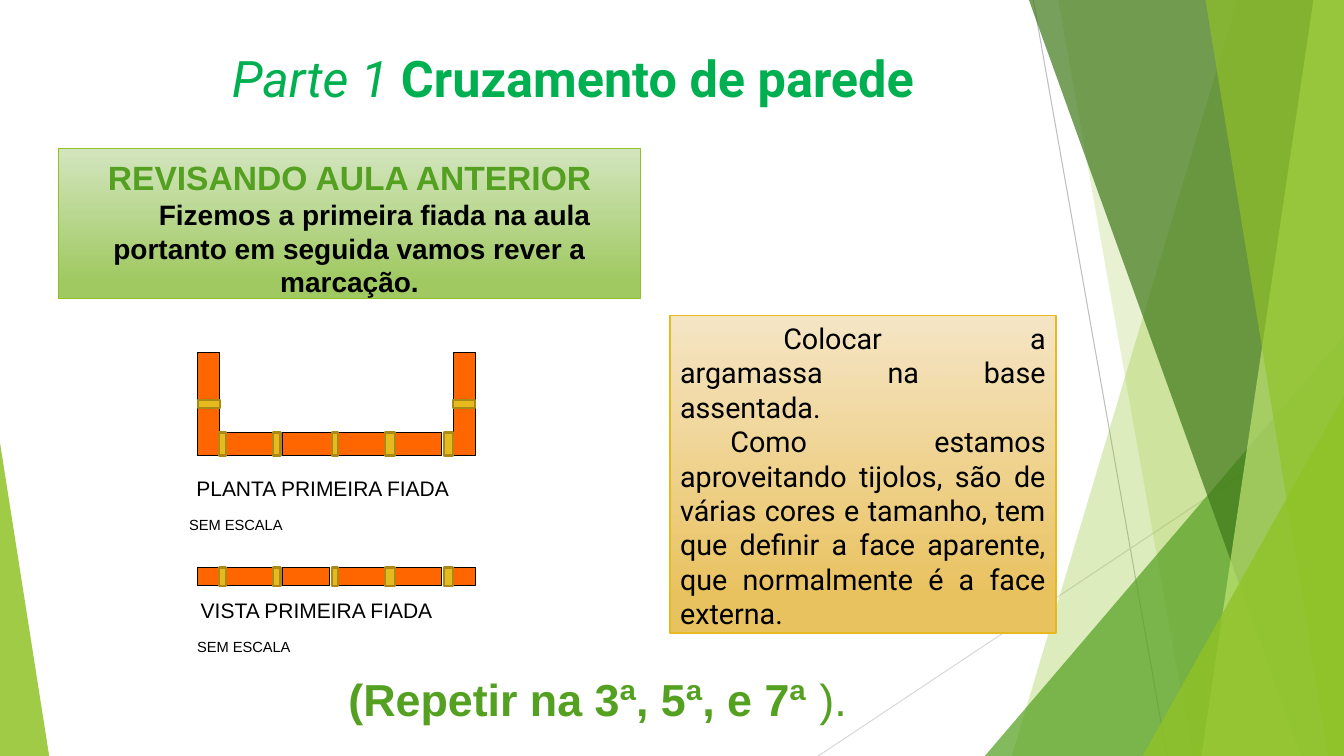
from lxml import etree
from pptx import Presentation
from pptx.dml.color import RGBColor
from pptx.enum.shapes import MSO_CONNECTOR as Connector, MSO_SHAPE as Preset
from pptx.enum.text import MSO_ANCHOR as Anchor, PP_ALIGN as Align
from pptx.oxml.ns import qn
from pptx.util import Cm, Pt

WIDTH, HEIGHT = 33.87, 19.05
LIME, GREEN, BLACK = "90C226", "54A021", "000000"
BRICK, MORTAR, MORTAR_EDGE = "FF6600", "E6B91E", "AA8916"

# Wall drawing: both views share the same columns
SIDE_LEFTS, SIDE_WIDTH = (4.98, 11.42), 0.56
BRICK_START, BRICK_PITCH, BRICK_WIDTH = 5.69, 1.42, 1.19
JOINTS = [(5.6, 0.18), (6.98, 0.18), (8.44, 0.16), (9.83, 0.25), (11.3, 0.23)]


def rgb(color):
    return RGBColor.from_string(color)


def lengths(*values):
    return [Cm(value) for value in values]


def set_alpha(shape, percent):
    color = shape.fill._xPr.find(qn("a:solidFill"))[0]
    etree.SubElement(color, qn("a:alpha")).set("val", str(percent * 1000))


def paint(shape, fill, line=None, line_width=0.75, alpha=None):
    shape.shadow.inherit = False
    shape.fill.solid()
    shape.fill.fore_color.rgb = rgb(fill)
    if alpha:
        set_alpha(shape, alpha)
    if line:
        shape.line.color.rgb = rgb(line)
        shape.line.width = Pt(line_width)
    else:
        shape.line.fill.background()


def add_line(slide, start, end, color):
    line = slide.shapes.add_connector(Connector.STRAIGHT, *lengths(*start, *end))
    line.line.color.rgb = rgb(color)
    line.line.width = Pt(0.75)
    etree.SubElement(line._element.spPr, qn("a:effectLst"))


def add_facet(slide, top, bottom, color, alpha):
    """Fill the slide from a slanted edge to the right border."""
    builder = slide.shapes.build_freeform(Cm(top), 0)
    corners = [(WIDTH, 0), (WIDTH, HEIGHT), (bottom, HEIGHT)]
    builder.add_line_segments([lengths(*corner) for corner in corners])
    paint(builder.convert_to_shape(), color, alpha=alpha)


def add_triangle(slide, left, top, width, apex, color, alpha):
    """Stand a triangle on the bottom border of the slide."""
    shape = slide.shapes.add_shape(
        Preset.ISOSCELES_TRIANGLE, *lengths(left, top, width, HEIGHT - top))
    shape.adjustments[0] = apex
    paint(shape, color, alpha=alpha)


def add_block(slide, box, fill, line, line_width):
    shape = slide.shapes.add_shape(Preset.RECTANGLE, *lengths(*box))
    paint(shape, fill, line, line_width)


def add_brick(slide, *box):
    add_block(slide, box, BRICK, BLACK, 0.75)


def add_mortar(slide, *box):
    add_block(slide, box, MORTAR, MORTAR_EDGE, 1.5)


def add_run(paragraph, text, color, size, **formats):
    run = paragraph.add_run()
    run.text = text
    run.font.color.rgb = rgb(color)
    for name, value in {"name": "Arial", "size": Pt(size), **formats}.items():
        setattr(run.font, name, value)


def indent_first_line(paragraph, indent):
    paragraph._p.get_or_add_pPr().set("indent", str(Cm(indent)))


def add_text(slide, box, text, size):
    frame = slide.shapes.add_textbox(*lengths(*box)).text_frame
    frame.word_wrap = True
    add_run(frame.paragraphs[0], text, BLACK, size)
    return frame.paragraphs[0]


def add_panel(slide, box, stops, line, paragraphs, align, top_inset):
    """Add a gradient box; paragraphs are (first-line indent, text, color, formats)."""
    shape = slide.shapes.add_shape(Preset.RECTANGLE, *lengths(*box))
    paint(shape, stops[0], line, 1)
    shape.fill.gradient()
    shape.fill.gradient_angle = 270
    for stop, color, position in zip(shape.fill.gradient_stops, stops, (0, 0.88)):
        stop.color.rgb = rgb(color)
        stop.position = position
    frame = shape.text_frame
    frame.word_wrap = True
    frame.vertical_anchor = Anchor.TOP
    frame.margin_top = Cm(top_inset)
    for index, (indent, text, color, formats) in enumerate(paragraphs):
        paragraph = frame.add_paragraph() if index else frame.paragraphs[0]
        paragraph.alignment = align
        indent_first_line(paragraph, indent)
        add_run(paragraph, text, color, **formats)


def add_background(slide):
    add_line(slide, (26.04, 0), (29.41, HEIGHT), "BFBFBF")
    add_line(slide, (WIDTH, 10.24), (20.62, HEIGHT), "D9D9D9")
    add_facet(slide, 31.19, 25.5, LIME, 30)
    add_facet(slide, 26.67, 30.05, LIME, 20)
    add_triangle(slide, 24.82, 8.46, 9.05, 1, GREEN, 72)
    add_facet(slide, 25.93, 32.79, "3F7819", 70)
    add_facet(slide, 33.1, 30.28, "C0E474", 70)
    add_facet(slide, 30.38, 33.48, LIME, 65)
    add_triangle(slide, 28.8, 9.98, 5.07, 1, LIME, 80)
    add_triangle(slide, 0, 11.15, 1.24, 0, LIME, 85)


def add_title(slide):
    title = slide.shapes.title
    title.left, title.top, title.width, title.height = lengths(5.59, 1.04, 18.97, 1.8)
    title.text_frame.word_wrap = True
    title.text_frame.vertical_anchor = Anchor.MIDDLE
    paragraph = title.text_frame.paragraphs[0]
    paragraph.alignment = Align.LEFT
    add_run(paragraph, "Parte 1 ", "00B050", 36, name="Roboto", italic=True)
    add_run(paragraph, "Cruzamento de parede", "00B050", 36, name="Roboto", bold=True)


def add_course(slide, top, height, widths):
    """Lay the row of bricks with its mortar joints."""
    for index, width in enumerate(widths):
        add_brick(slide, BRICK_START + index * BRICK_PITCH, top, width, height)
    for center, width in JOINTS:
        add_mortar(slide, center - width / 2, top, width, height)


def add_plan(slide):
    for left in SIDE_LEFTS:
        for top in (8.88, 10.3):
            add_brick(slide, left, top, SIDE_WIDTH, BRICK_WIDTH)
        add_mortar(slide, left, 10.08, SIDE_WIDTH, 0.2)
    add_course(slide, 10.9, 0.58, [BRICK_WIDTH, 1.3, BRICK_WIDTH, BRICK_WIDTH])
    add_text(slide, (4.7, 11.86, 8.4, 0.86), "PLANTA PRIMEIRA FIADA", 15)
    add_text(slide, (4.52, 12.88, 5.54, 0.74), "SEM ESCALA", 10.5)


def add_elevation(slide):
    for left in SIDE_LEFTS:
        add_brick(slide, left, 14.3, SIDE_WIDTH, 0.46)
    add_course(slide, 14.3, 0.46, [BRICK_WIDTH] * 4)
    add_text(slide, (4.81, 14.94, 8.4, 0.86), "VISTA PRIMEIRA FIADA", 15)
    add_text(slide, (4.72, 15.96, 5.54, 0.76), "SEM ESCALA", 10.5)


def main():
    presentation = Presentation()
    presentation.slide_width, presentation.slide_height = lengths(WIDTH, HEIGHT)
    slide = presentation.slides.add_slide(presentation.slide_layouts[5])
    add_background(slide)
    add_title(slide)
    add_panel(
        slide, (1.47, 3.74, 14.68, 3.79), ("D3E5BE", "A0C962"), LIME,
        [(0, "REVISANDO AULA ANTERIOR", GREEN, {"size": 24, "bold": True}),
         (1.27, "Fizemos a primeira fiada na aula portanto em seguida vamos "
          "rever a marcação.", BLACK, {"size": 20, "bold": True})],
        Align.CENTER, 0.22)
    body = {"size": 20.5, "name": "Roboto"}
    add_panel(
        slide, (16.89, 7.95, 9.72, 8), ("F5E5C5", "E9C260"), MORTAR,
        [(2.6, "Colocar a argamassa na base assentada.", BLACK, body),
         (1.27, "Como estamos aproveitando tijolos, são de várias cores e "
          "tamanho, tem que definir a face aparente, que normalmente é a face "
          "externa.", BLACK, body)],
        Align.JUSTIFY, 0.13)
    add_plan(slide)
    add_elevation(slide)
    repeat = add_text(slide, (8.53, 16.79, 13.79, 1.63), "", 32)
    add_run(repeat, "(Repetir na 3ª, 5ª, e 7ª ", GREEN, 32, bold=True)
    add_run(repeat, ").", GREEN, 32)
    presentation.save("out.pptx")


if __name__ == "__main__":
    main()
